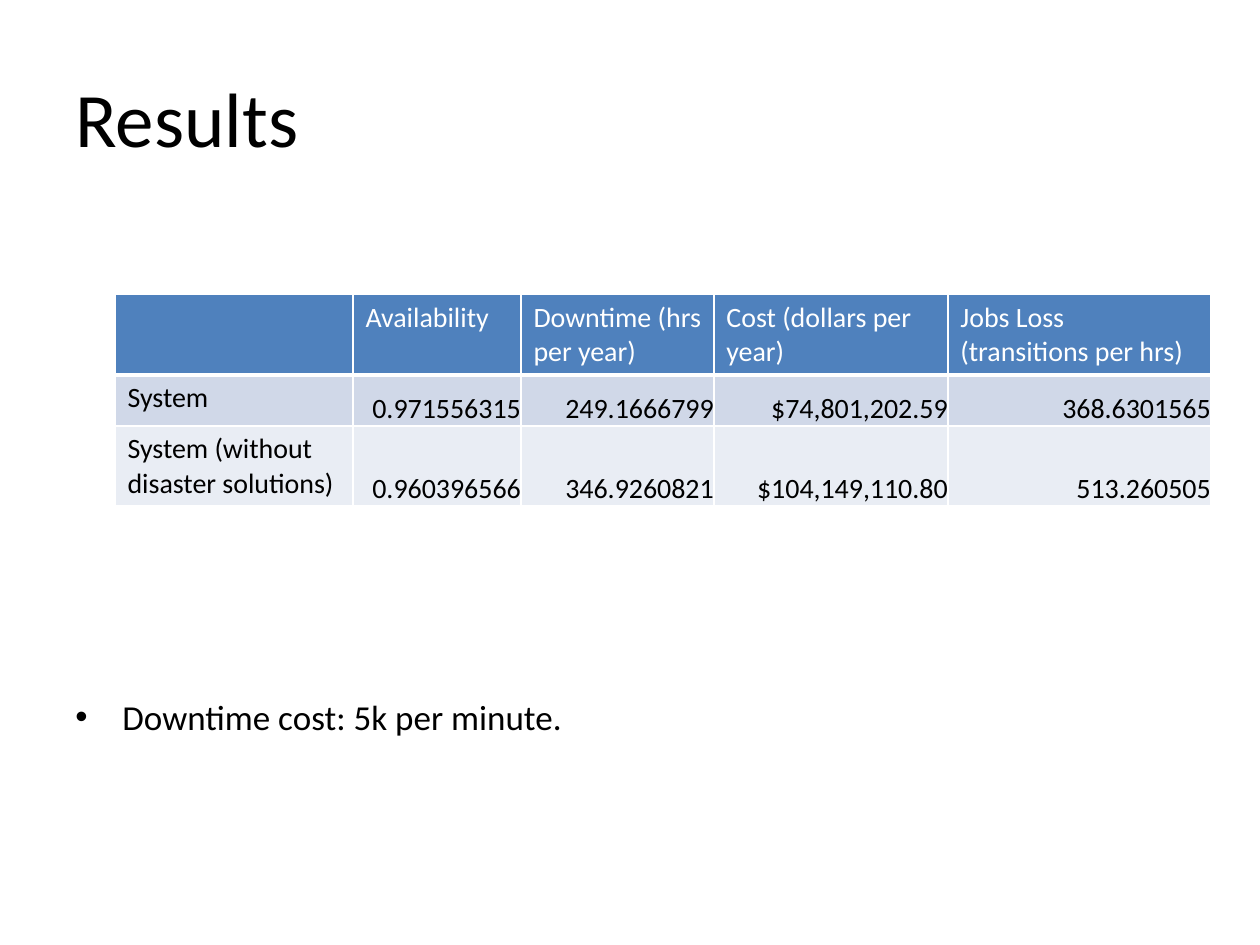
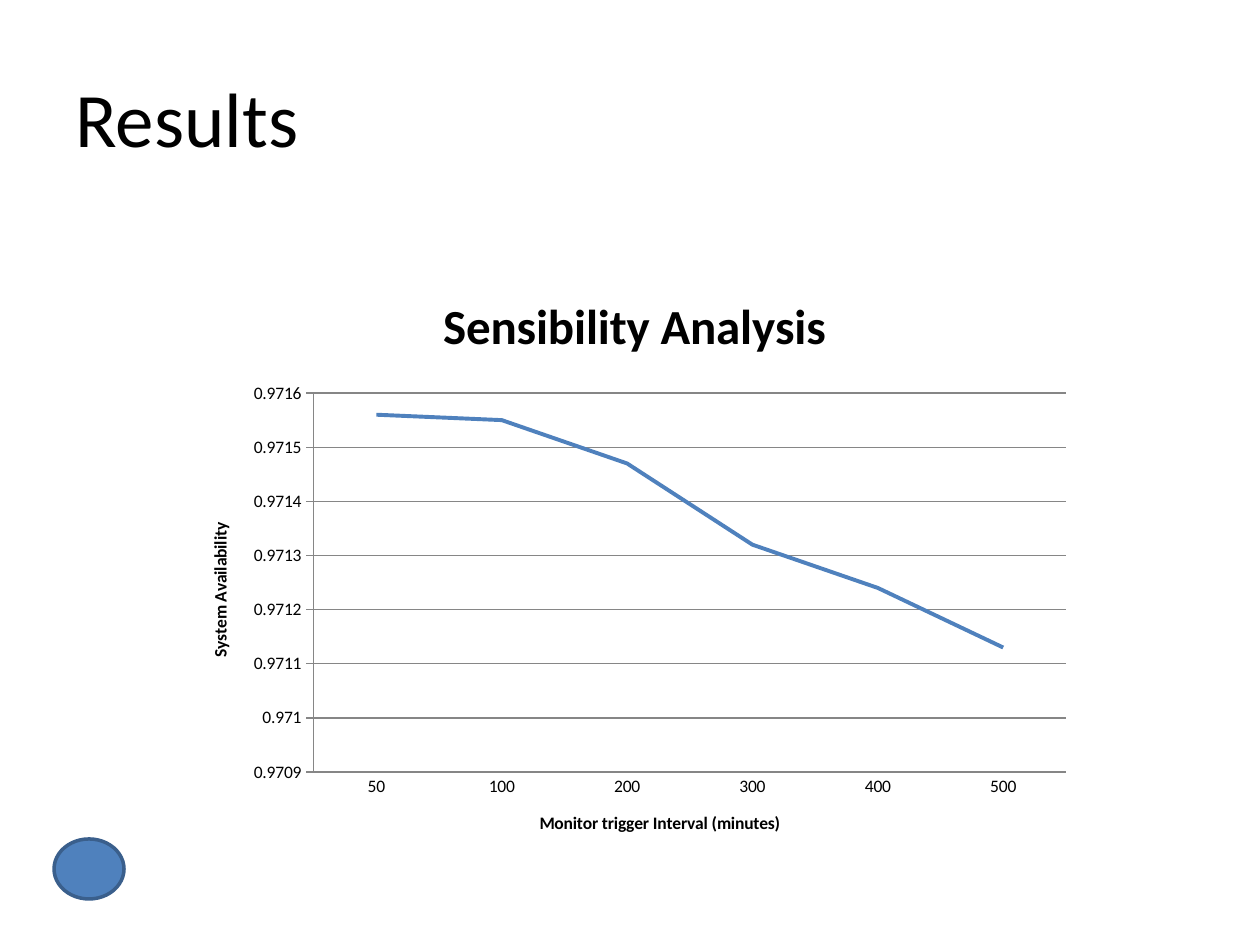
from lxml import etree
from pptx import Presentation
from pptx.chart.data import CategoryChartData
from pptx.dml.color import RGBColor
from pptx.enum.chart import XL_CHART_TYPE, XL_MARKER_STYLE, XL_TICK_MARK
from pptx.enum.shapes import MSO_SHAPE
from pptx.enum.text import MSO_ANCHOR, PP_ALIGN
from pptx.oxml import parse_xml
from pptx.oxml.ns import nsdecls, qn
from pptx.util import Pt

EMU_PER_PIXEL = 914400 / 126
SLIDE_WIDTH, SLIDE_HEIGHT = 1260, 945
BLANK_LAYOUT = 6
FONT = "Calibri"
COLORS = {
    "text": "000000",
    "white": "FFFFFF",
    "accent": "4F81BD",
    "accent_dark": "3A5F8C",
    "band_dark": "D0D8E8",
    "band_light": "E9EDF4",
    "grid": "868686",
}
LINE_CHART = XL_CHART_TYPE.LINE
NO_MARKER = XL_MARKER_STYLE.NONE
TICK_NONE, TICK_CROSS = XL_TICK_MARK.NONE, XL_TICK_MARK.CROSS
ELLIPSE = MSO_SHAPE.OVAL
TOP, MIDDLE, BOTTOM = MSO_ANCHOR.TOP, MSO_ANCHOR.MIDDLE, MSO_ANCHOR.BOTTOM
LEFT, RIGHT = PP_ALIGN.LEFT, PP_ALIGN.RIGHT


def px(length):
    return round(length * EMU_PER_PIXEL)


def color(name):
    return RGBColor.from_string(COLORS[name])


class Deck:
    """Holds the presentation, its style and the slide being filled."""

    def __init__(self):
        self.presentation = Presentation()
        self.presentation.slide_width = px(SLIDE_WIDTH)
        self.presentation.slide_height = px(SLIDE_HEIGHT)
        self.slide = None

    def add_slide(self, title):
        layout = self.presentation.slide_layouts[BLANK_LAYOUT]
        self.slide = self.presentation.slides.add_slide(layout)
        self.add_text(title, (63, 38, 1134, 157), 44, MIDDLE)

    def style_font(self, font, size, color_name="text", bold=False):
        font.name, font.size, font.bold = FONT, Pt(size), bold
        font.color.rgb = color(color_name)

    def add_run(self, paragraph, text, size, color_name="text", bold=False):
        run = paragraph.add_run()
        run.text = text
        self.style_font(run.font, size, color_name, bold)

    def add_text(self, text, box, size, anchor=TOP):
        shape = self.slide.shapes.add_textbox(*map(px, box))
        frame = shape.text_frame
        frame.word_wrap = True
        frame.vertical_anchor = anchor
        paragraph = frame.paragraphs[0]
        self.add_run(paragraph, text, size)
        return paragraph

    def add_bullet(self, text, box, size, indent):
        paragraph = self.add_text(text, box, size)
        properties = paragraph._p.get_or_add_pPr()
        properties.set("marL", str(px(indent)))
        properties.set("indent", str(-px(indent)))
        etree.SubElement(properties, qn("a:buFont")).set("typeface", "Arial")
        etree.SubElement(properties, qn("a:buChar")).set("char", "•")

    def add_ellipse(self, box, fill, line, line_width):
        shape = self.slide.shapes.add_shape(ELLIPSE, *map(px, box))
        shape.shadow.inherit = False
        shape.fill.solid()
        shape.fill.fore_color.rgb = color(fill)
        shape.line.color.rgb = color(line)
        shape.line.width = Pt(line_width)

    def set_borders(self, cell, bottom_width):
        properties = cell._tc.get_or_add_tcPr()
        for side, width in zip("LRTB", (1, 1, 1, bottom_width)):
            properties.append(parse_xml(
                f'<a:ln{side} {nsdecls("a")} w="{Pt(width)}"><a:solidFill>'
                f'<a:srgbClr val="{COLORS["white"]}"/></a:solidFill></a:ln{side}>'))

    def fill_cell(self, cell, text, fill, is_header, is_number):
        self.set_borders(cell, 3 if is_header else 1)
        cell.fill.solid()
        cell.fill.fore_color.rgb = color(fill)
        if is_number:
            cell.margin_left = cell.margin_right = 0
            cell.margin_top = cell.margin_bottom = 0
        cell.vertical_anchor = BOTTOM if is_number else TOP
        paragraph = cell.text_frame.paragraphs[0]
        paragraph.alignment = RIGHT if is_number else LEFT
        if text:
            self.add_run(paragraph, text, 16, "white" if is_header else "text")

    def add_table(self, left, top, widths, heights, rows):
        box = (left, top, sum(widths), sum(heights))
        table = self.slide.shapes.add_table(
            len(rows), len(widths), *map(px, box)).table
        for column, width in zip(table.columns, widths):
            column.width = px(width)
        fills = ("accent", "band_dark", "band_light")
        for row_index, texts in enumerate(rows):
            table.rows[row_index].height = px(heights[row_index])
            is_header = row_index == 0
            for column_index, text in enumerate(texts):
                self.fill_cell(table.cell(row_index, column_index), text,
                               fills[row_index], is_header,
                               not is_header and column_index > 0)

    def set_title(self, owner, text, size):
        """Give a chart or an axis a bold title."""
        paragraph = owner.text_frame.paragraphs[0]
        self.add_run(paragraph, text, size, bold=True)

    def style_axis(self, axis, title, tick_mark):
        self.set_title(axis.axis_title, title, 10)
        axis.major_tick_mark = tick_mark
        axis.minor_tick_mark = TICK_NONE
        self.style_line(axis.format.line, "grid", 0.75)

    def style_line(self, line, color_name, width):
        line.color.rgb = color(color_name)
        line.width = Pt(width)

    def place_plot(self, chart, box, plot_box):
        """Fix the inner plot area, given in slide px, inside the chart."""
        left, top, width, height = box
        fractions = {
            "x": (plot_box[0] - left) / width,
            "y": (plot_box[1] - top) / height,
            "w": plot_box[2] / width,
            "h": plot_box[3] / height,
        }
        plot_area = chart._chartSpace.chart.plotArea
        for old_layout in plot_area.findall(qn("c:layout")):
            plot_area.remove(old_layout)
        layout = etree.Element(qn("c:layout"))
        manual = etree.SubElement(layout, qn("c:manualLayout"))
        settings = {"layoutTarget": "inner", "xMode": "edge", "yMode": "edge"}
        settings.update((key, f"{value:.3f}") for key, value in fractions.items())
        for tag, value in settings.items():
            etree.SubElement(manual, qn(f"c:{tag}")).set("val", value)
        plot_area.insert(0, layout)

    def add_line_chart(self, box, plot_box, title, axis_titles, points, scale):
        data = CategoryChartData()
        data.categories = list(points)
        data.add_series("Series 1", points.values())
        chart = self.slide.shapes.add_chart(LINE_CHART, *map(px, box), data).chart
        self.style_font(chart.font, 10)
        chart.has_legend = False
        self.set_title(chart.chart_title, title, 28)
        self.place_plot(chart, box, plot_box)
        self.style_axis(chart.category_axis, axis_titles[0], TICK_NONE)
        values = chart.value_axis
        self.style_axis(values, axis_titles[1], TICK_CROSS)
        values.minimum_scale, values.maximum_scale, values.major_unit = scale
        values.has_major_gridlines = True
        self.style_line(values.major_gridlines.format.line, "grid", 0.75)
        values.tick_labels.number_format = "General"
        values.tick_labels.number_format_is_linked = False
        chart.plots[0].vary_by_categories = False
        series = chart.plots[0].series[0]
        series.smooth = False
        series.marker.style = NO_MARKER
        self.style_line(series.format.line, "accent", 2.25)


def add_comparison_slide(deck):
    deck.add_slide("Results")
    deck.add_table(115, 294, (238, 168, 193, 234, 263), (81, 51, 80), (
        ("", "Availability", "Downtime (hrs per year)",
         "Cost (dollars per year)", "Jobs Loss (transitions per hrs)"),
        ("System", "0.971556315", "249.1666799",
         "$74,801,202.59", "368.6301565"),
        ("System (without disaster solutions)", "0.960396566", "346.9260821",
         "$104,149,110.80", "513.260505"),
    ))
    deck.add_bullet("Downtime cost: 5k per minute.", (63, 689, 1134, 56), 20, 47)


def add_sensibility_slide(deck):
    deck.add_slide("Results")
    availability_by_interval = {
        "50": 0.97156, "100": 0.97155, "200": 0.97147,
        "300": 0.97132, "400": 0.97124, "500": 0.97113,
    }
    deck.add_line_chart(
        (184, 265, 901, 596), (314, 393, 752, 379), "Sensibility Analysis",
        ("Monitor trigger Interval (minutes)", "System Availability"),
        availability_by_interval, (0.9709, 0.9716, 0.0001))
    deck.add_ellipse((54, 839, 70, 60), "accent", "accent_dark", 2)


def main():
    deck = Deck()
    add_comparison_slide(deck)
    add_sensibility_slide(deck)
    deck.presentation.save("out.pptx")


if __name__ == "__main__":
    main()
